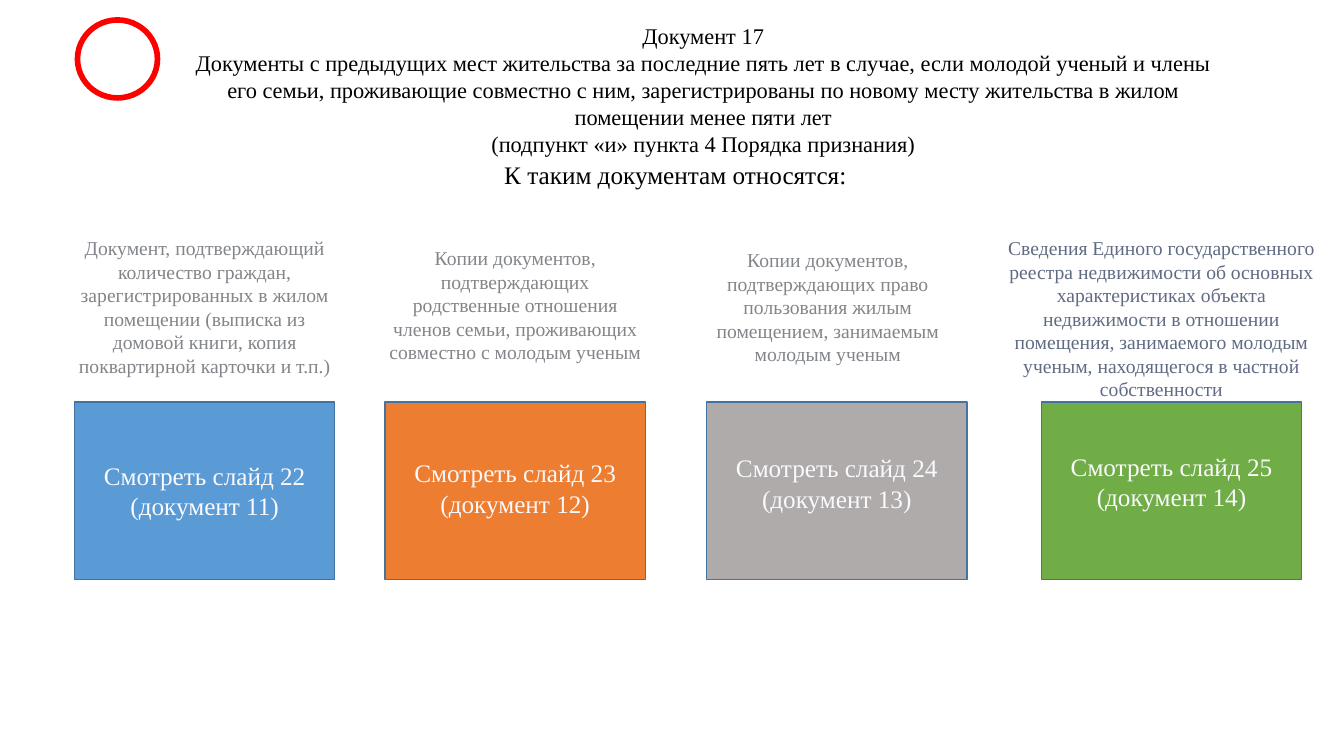
from pptx import Presentation
from pptx.dml.color import RGBColor
from pptx.enum.shapes import MSO_SHAPE
from pptx.enum.text import MSO_ANCHOR, MSO_AUTO_SIZE, PP_ALIGN
from pptx.util import Inches, Pt

RECTANGLE = MSO_SHAPE.RECTANGLE
DONUT = MSO_SHAPE.DONUT
TOP = MSO_ANCHOR.TOP
MIDDLE = MSO_ANCHOR.MIDDLE
CENTER = PP_ALIGN.CENTER
NO_AUTOFIT = MSO_AUTO_SIZE.NONE
TITLE_ONLY = 5

CARD_WIDTH = 2.58
CARD_TOP = 3.99
CARD_HEIGHT = 1.76

TITLE = [
    "Документ 17",
    "Документы с предыдущих мест жительства за последние пять лет в случае, "
    "если молодой ученый и члены его семьи, проживающие совместно с ним, "
    "зарегистрированы по новому месту жительства в жилом помещении менее пяти лет",
    "(подпункт «и» пункта 4 Порядка признания)",
]

CARDS = [
    dict(left=0.74, fill="5B9BD5", label_box=(4.56, 0.61), slide=22, document=11,
         note_box=(0.74, 2.34, CARD_WIDTH, 1.41), note_color="828589",
         note="Документ, подтверждающий количество граждан, зарегистрированных в жилом "
              "помещении (выписка из домовой книги, копия поквартирной карточки и т.п.)"),
    dict(left=3.82, fill="ED7D31", label_box=(4.56, 0.56), slide=23, document=12,
         note_box=(3.82, 2.44, CARD_WIDTH, 1.18), note_color="828589",
         note="Копии документов, подтверждающих родственные отношения членов семьи, "
              "проживающих совместно с молодым ученым"),
    dict(left=7.01, fill="AFABAB", label_box=(4.45, 0.68), slide=24, document=13,
         note_box=(6.92, 2.46, CARD_WIDTH, 1.18), note_color="828589",
         note="Копии документов, подтверждающих право пользования жилым помещением, "
              "занимаемым молодым ученым"),
    dict(left=10.33, fill="70AD47", label_box=(4.45, 0.65), slide=25, document=14,
         note_box=(9.94, 2.34, 3.16, 1.65), note_color="606B83",
         note="Сведения Единого государственного реестра недвижимости об основных "
              "характеристиках объекта недвижимости в отношении помещения, занимаемого "
              "молодым ученым, находящегося в частной собственности"),
]


def rgb(value):
    return RGBColor.from_string(value)


def write(frame, lines, size, color="000000", font="Times New Roman",
          anchor=TOP, insets=(0, 0)):
    frame.word_wrap = True
    frame.auto_size = NO_AUTOFIT
    frame.vertical_anchor = anchor
    frame.margin_left = frame.margin_right = Inches(insets[0])
    frame.margin_top = frame.margin_bottom = Inches(insets[1])
    for index, line in enumerate(lines):
        para = frame.add_paragraph() if index else frame.paragraphs[0]
        para.alignment = CENTER
        para.line_spacing = 1.0
        para.space_before = para.space_after = Pt(0)
        span = para.add_run()
        span.text = line
        span.font.name = font
        span.font.size = Pt(size)
        span.font.color.rgb = rgb(color)


class Page:
    outline = "43739E"
    insets = (0.1, 0.05)

    def __init__(self, deck):
        self.slide = deck.slides.add_slide(deck.slide_layouts[TITLE_ONLY])

    def title(self, bounds, lines, size):
        box = self.slide.shapes.title
        box.left, box.top, box.width, box.height = map(Inches, bounds)
        write(box.text_frame, lines, size, insets=self.insets)

    def text(self, bounds, lines, size, **style):
        box = self.slide.shapes.add_textbox(*map(Inches, bounds))
        write(box.text_frame, lines, size, **style)

    def shape(self, kind, bounds, fill, outlined=False):
        shape = self.slide.shapes.add_shape(kind, *map(Inches, bounds))
        shape.shadow.inherit = False
        shape.fill.solid()
        shape.fill.fore_color.rgb = rgb(fill)
        if outlined:
            shape.line.color.rgb = rgb(self.outline)
            shape.line.width = Pt(1)
        else:
            shape.line.fill.background()
        return shape

    def card(self, left, fill, label_box, slide, document, note_box, note_color, note):
        label_top, label_height = label_box
        self.shape(RECTANGLE, (left, CARD_TOP, CARD_WIDTH, CARD_HEIGHT), fill, outlined=True)
        self.text((left, label_top, CARD_WIDTH, label_height),
                  [f"Смотреть слайд {slide}", f"(документ {document})"],
                  18, color="FAF9FC", anchor=MIDDLE)
        self.text(note_box, [note], 14, color=note_color)


def main():
    deck = Presentation()
    deck.slide_width = Inches(13.33)
    deck.slide_height = Inches(7.5)
    page = Page(deck)
    page.title((1.67, 0.17, 10.61, 1.48), TITLE, 16)
    for card in CARDS:
        page.card(**card)
    ring = page.shape(DONUT, (0.74, 0.17, 0.85, 0.83), "FF0000")
    ring.adjustments[0] = 0.068
    page.text((1.7, 1.53, 10, 0.4), ["К таким документам относятся:"], 18, insets=page.insets)
    deck.save("out.pptx")


if __name__ == "__main__":
    main()
